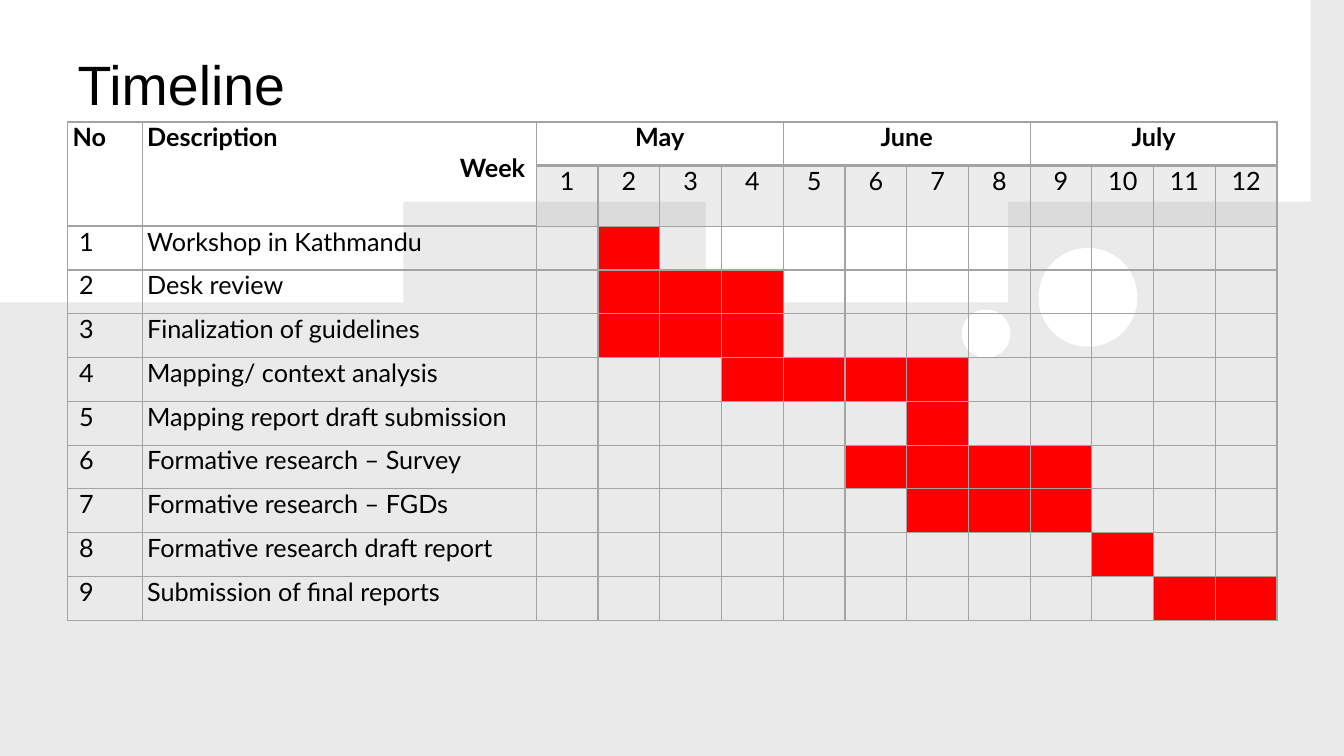
from lxml.etree import SubElement
from pptx import Presentation
from pptx.dml.color import RGBColor
from pptx.enum.shapes import MSO_SHAPE
from pptx.enum.text import MSO_ANCHOR, PP_ALIGN
from pptx.oxml.ns import qn
from pptx.util import Inches, Pt

TITLE = "Timeline"
MONTHS = ["May", "June", "July"]
WEEKS_PER_MONTH = 4
# Task, first week, last week
TASKS = [
    ("Workshop in Kathmandu", 2, 2),
    ("Desk review ", 2, 4),
    ("Finalization of guidelines ", 2, 4),
    ("Mapping/ context analysis ", 4, 7),
    ("Mapping report draft submission ", 7, 7),
    ("Formative research – Survey ", 6, 9),
    ("Formative research – FGDs ", 7, 9),
    ("Formative research draft report", 10, 10),
    ("Submission of final reports ", 11, 12),
]

WIDTH, HEIGHT = 13.33, 7.5
LEFT, TOP, TABLE_W, TABLE_H = 0.67, 1.21, 12, 4.78
NO_W, TASK_W = 0.74, 3.91
WEEKS = len(MONTHS) * WEEKS_PER_MONTH
HEAD_ROWS, HEAD_COLS = 2, 2

BLACK = RGBColor(0x00, 0x00, 0x00)
WHITE = RGBColor(0xFF, 0xFF, 0xFF)
PALE = RGBColor(0xF2, 0xF1, 0xF1)
VEIL = RGBColor(0xAE, 0xAE, 0xAE)
GRID = RGBColor(0xA3, 0xA3, 0xA3)
RED = RGBColor(0xFF, 0x00, 0x00)

# Lower edge of the white wave, right to left: control, control, end
WAVE_START = (13.33, 2.08)
WAVE = [
    ((13.31, 2.1), (13.28, 2.12), (13.26, 2.13)),
    ((12.89, 2.32), (12.51, 2.31), (12.11, 2.23)),
    ((11.68, 2.14), (11.23, 2.07), (10.79, 2.06)),
    ((10.38, 2.06), (10.1, 2.36), (9.83, 2.64)),
    ((9.17, 3.33), (8.41, 3.53), (7.65, 3.14)),
    ((7.35, 2.99), (7.1, 2.72), (6.87, 2.46)),
    ((6.26, 1.77), (5.51, 1.75), (4.8, 2.11)),
    ((4.3, 2.36), (3.82, 2.67), (3.29, 2.88)),
    ((2.16, 3.34), (1.06, 3.32), (0.09, 2.67)),
    ((0.06, 2.65), (0.03, 2.62), (0, 2.6)),
]
BUBBLES = [(9.78, 3.31, 0.24), (10.79, 2.95, 0.49)]  # centre x, y, radius


def set_alpha(fill_parent, percent):
    color = fill_parent.find(".//" + qn("a:srgbClr"))
    SubElement(color, qn("a:alpha"), val=str(percent * 1000))


def paint(shape, color):
    shape.shadow.inherit = False
    shape.fill.solid()
    shape.fill.fore_color.rgb = color
    shape.line.fill.background()


def add_plain(s, kind, x, y, w, h, color):
    shape = s.shapes.add_shape(kind, Inches(x), Inches(y), Inches(w), Inches(h))
    paint(shape, color)
    return shape


def bezier(p0, p1, p2, p3, steps=20):
    for i in range(1, steps + 1):
        t = i / steps
        u = 1 - t
        yield tuple(u**3 * a + 3 * u * u * t * b + 3 * u * t * t * c + t**3 * d
                    for a, b, c, d in zip(p0, p1, p2, p3))


def draw_background(s):
    add_plain(s, MSO_SHAPE.RECTANGLE, 0, 0, WIDTH, HEIGHT, PALE)
    veil = add_plain(s, MSO_SHAPE.RECTANGLE, 0, 0, WIDTH, HEIGHT, VEIL)
    set_alpha(veil._element.spPr, 10)
    points = [(WIDTH, 0), WAVE_START]
    for curve in WAVE:
        points.extend(bezier(points[-1], *curve))
    builder = s.shapes.build_freeform(0, 0, scale=Inches(1))
    builder.add_line_segments(points, close=True)
    paint(builder.convert_to_shape(), WHITE)
    for x, y, r in BUBBLES:
        add_plain(s, MSO_SHAPE.OVAL, x - r, y - r, 2 * r, 2 * r, WHITE)


def set_borders(cell, bottom):
    tcPr = cell._tc.get_or_add_tcPr()
    for i, (side, width) in enumerate([("L", 1), ("R", 1), ("T", 1), ("B", bottom)]):
        ln = SubElement(tcPr, qn("a:ln" + side), w=str(Pt(width)))
        SubElement(SubElement(ln, qn("a:solidFill")), qn("a:srgbClr"), val=str(GRID))
        tcPr.insert(i, ln)


def write(cell, text, *aligns, bold=False):
    """Fill a cell, with one alignment for each line of the text."""
    cell.text_frame.text = text
    for p, align in zip(cell.text_frame.paragraphs, aligns):
        p.alignment = align
        for r in p.runs:
            r.font.name, r.font.size = "Lato", Pt(18)
            r.font.bold, r.font.color.rgb = bold, BLACK


def shade(cell, color):
    cell.fill.solid()
    cell.fill.fore_color.rgb = color


def draw_timeline(s):
    rows, cols = HEAD_ROWS + len(TASKS), HEAD_COLS + WEEKS
    frame = s.shapes.add_table(rows, cols, Inches(LEFT), Inches(TOP),
                               Inches(TABLE_W), Inches(TABLE_H))
    table = frame.table
    table.first_row = table.horz_banding = False
    widths = [NO_W, TASK_W] + [(TABLE_W - NO_W - TASK_W) / WEEKS] * WEEKS
    for column, width in zip(table.columns, widths):
        column.width = Inches(width)
    for row in table.rows:
        row.height = Inches(TABLE_H / rows)

    for i in range(rows):
        for j in range(cols):
            cell = table.cell(i, j)
            cell.margin_left = cell.margin_right = Inches(0.05)
            cell.margin_top = cell.margin_bottom = 0
            cell.fill.background()
            header = i == 0 or (i < HEAD_ROWS and j < HEAD_COLS)
            set_borders(cell, 2 if header else 1)

    for j in range(HEAD_COLS):
        table.cell(0, j).merge(table.cell(HEAD_ROWS - 1, j))
    write(table.cell(0, 0), "No", PP_ALIGN.JUSTIFY, bold=True)
    write(table.cell(0, 1), "Description \nWeek ",
          PP_ALIGN.JUSTIFY, PP_ALIGN.RIGHT, bold=True)
    for m, month in enumerate(MONTHS):
        first = HEAD_COLS + m * WEEKS_PER_MONTH
        table.cell(0, first).merge(table.cell(0, first + WEEKS_PER_MONTH - 1))
        write(table.cell(0, first), month, PP_ALIGN.CENTER, bold=True)
    for week in range(1, WEEKS + 1):
        cell = table.cell(1, HEAD_COLS + week - 1)
        write(cell, str(week), PP_ALIGN.CENTER)
        shade(cell, GRID)
        set_alpha(cell._tc.tcPr.find(qn("a:solidFill")), 20)

    for n, (task, start, end) in enumerate(TASKS, 1):
        i = HEAD_ROWS + n - 1
        write(table.cell(i, 0), f" {n}", PP_ALIGN.JUSTIFY)
        write(table.cell(i, 1), task, PP_ALIGN.JUSTIFY)
        for week in range(start, end + 1):
            shade(table.cell(i, HEAD_COLS + week - 1), RED)


def place_title(s):
    title = s.shapes.title
    s.shapes._spTree.append(title._element)  # bring in front of the background
    title.left, title.top = Inches(LEFT), Inches(0.41)
    title.width, title.height = Inches(TABLE_W), Inches(0.8)
    tf = title.text_frame
    tf.text = TITLE
    tf.vertical_anchor = MSO_ANCHOR.BOTTOM
    p = tf.paragraphs[0]
    p.alignment = PP_ALIGN.LEFT
    font = p.runs[0].font
    font.name, font.size, font.color.rgb = "Arial", Pt(39.6), BLACK


def main():
    prs = Presentation()
    prs.slide_width, prs.slide_height = Inches(WIDTH), Inches(HEIGHT)
    s = prs.slides.add_slide(prs.slide_layouts[5])
    draw_background(s)
    place_title(s)
    draw_timeline(s)
    prs.save("out.pptx")


if __name__ == "__main__":
    main()
